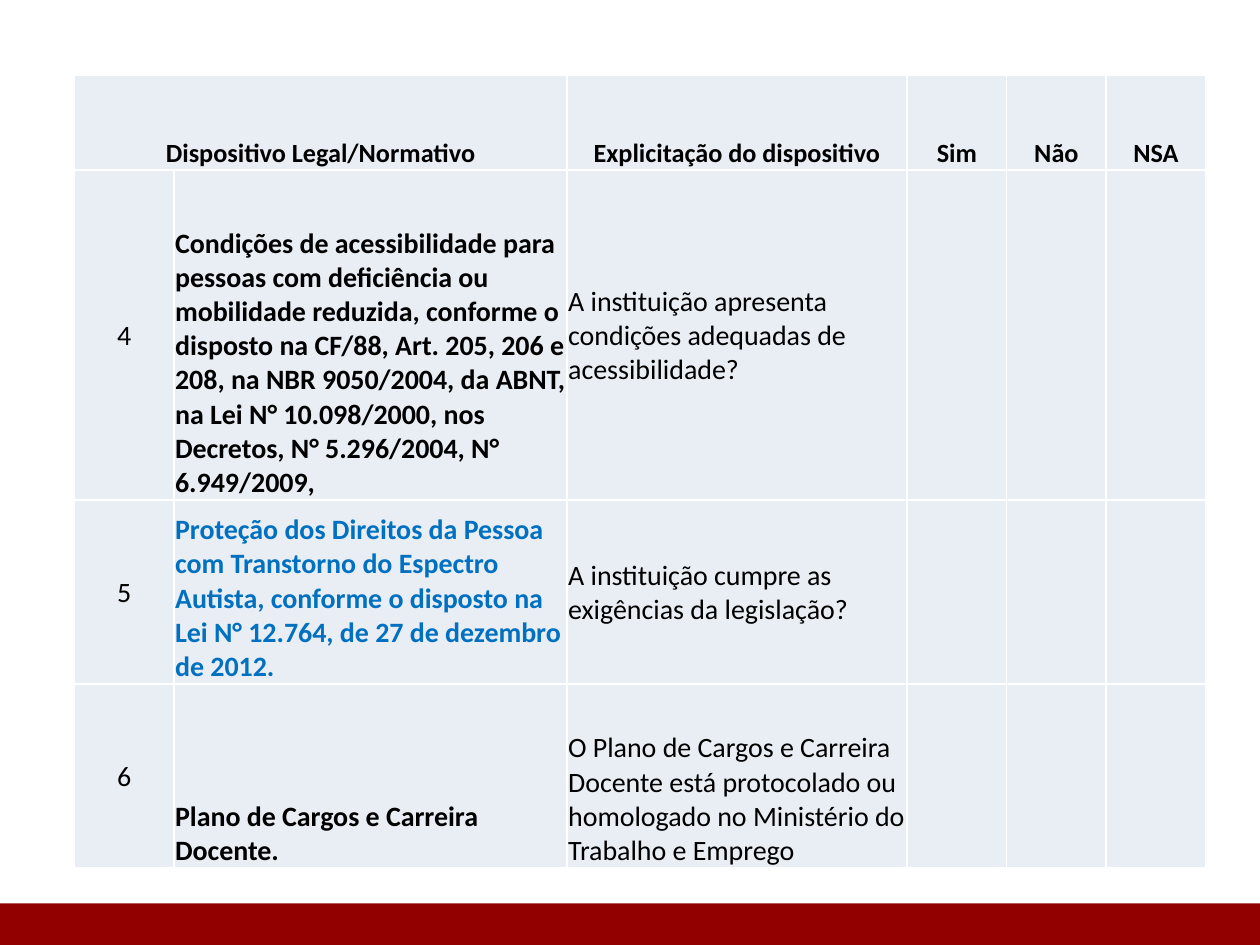
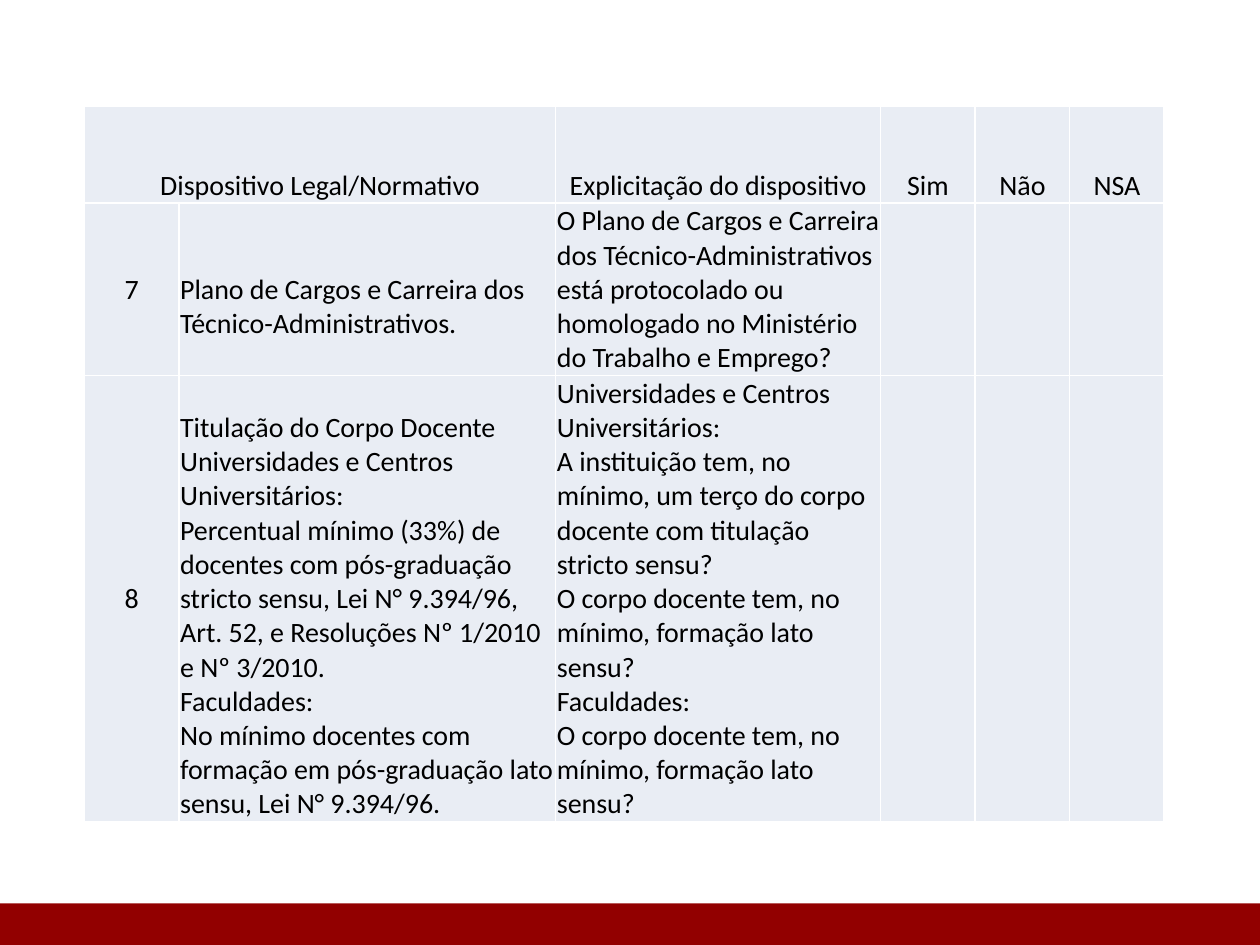
import dataclasses

import lxml.etree
import pptx
import pptx.dml.color
import pptx.enum.shapes
import pptx.enum.text
import pptx.oxml.ns
import pptx.util

Inches = pptx.util.Inches
Pt = pptx.util.Pt
RGB = pptx.dml.color.RGBColor.from_string
ANCHOR = pptx.enum.text.MSO_ANCHOR
ALIGN = pptx.enum.text.PP_ALIGN


@dataclasses.dataclass(frozen=True)
class Theme:
    font: str = "Calibri"
    text: str = "000000"
    highlight: str = "0070C0"
    cell: str = "E9EDF4"
    border: str = "FFFFFF"
    band: str = "920000"
    header_size: int = 15
    body_size: int = 16
    border_width: int = 1


@dataclasses.dataclass(frozen=True)
class Requirement:
    number: int
    rule: str
    question: str
    rule_color: str = Theme.text
    rule_bottom: float = 0
    question_anchor: ANCHOR = ANCHOR.MIDDLE


THEME = Theme()
HEADINGS = ["Dispositivo Legal/Normativo", "Explicitação do dispositivo", "Sim", "Não", "NSA"]

ACCESS_AND_CAREER = [
    Requirement(
        4,
        "Condições de acessibilidade para pessoas com deficiência ou mobilidade reduzida, "
        "conforme o disposto na CF/88, Art. 205, 206 e 208, na NBR 9050/2004, da ABNT, "
        "na Lei N° 10.098/2000, nos Decretos, N° 5.296/2004, N° 6.949/2009,",
        "A instituição apresenta condições adequadas de acessibilidade?",
    ),
    Requirement(
        5,
        "Proteção dos Direitos da Pessoa com Transtorno do Espectro Autista, "
        "conforme o disposto na Lei N° 12.764, de 27 de dezembro de 2012.",
        "A instituição cumpre as exigências da legislação?",
        rule_color=THEME.highlight,
    ),
    Requirement(
        6,
        "Plano de Cargos e Carreira Docente.",
        "O Plano de Cargos e Carreira Docente está protocolado ou homologado "
        "no Ministério do Trabalho e Emprego",
        question_anchor=ANCHOR.BOTTOM,
    ),
]

STAFF_AND_DEGREES = [
    Requirement(
        7,
        "Plano de Cargos e Carreira dos Técnico-Administrativos.",
        "O Plano de Cargos e Carreira dos Técnico-Administrativos está protocolado "
        "ou homologado no Ministério do Trabalho e Emprego?",
        rule_bottom=0.27,
    ),
    Requirement(
        8,
        "Titulação do Corpo Docente\n"
        "Universidades e Centros Universitários:\n"
        "Percentual mínimo (33%) de docentes com pós-graduação stricto sensu, "
        "Lei N° 9.394/96, Art. 52, e Resoluções Nº 1/2010 e Nº 3/2010.\n"
        "Faculdades:\n"
        "No mínimo docentes com formação em pós-graduação lato sensu, Lei N° 9.394/96.",
        "Universidades e Centros Universitários:\n"
        "A instituição tem, no mínimo, um terço do corpo docente com titulação stricto sensu?\n"
        "O corpo docente tem, no mínimo, formação lato sensu?\n"
        "Faculdades:\n"
        "O corpo docente tem, no mínimo, formação lato sensu?",
    ),
]


def draw_borders(cell):
    properties = cell._tc.get_or_add_tcPr()
    qn = pptx.oxml.ns.qn
    for side in ("a:lnL", "a:lnR", "a:lnT", "a:lnB"):
        line = lxml.etree.SubElement(properties, qn(side), w=str(Pt(THEME.border_width)))
        fill = lxml.etree.SubElement(line, qn("a:solidFill"))
        lxml.etree.SubElement(fill, qn("a:srgbClr"), val=THEME.border)


def style_cell(cell):
    draw_borders(cell)
    cell.fill.solid()
    cell.fill.fore_color.rgb = RGB(THEME.cell)


def write_cell(cell, text, align=ALIGN.LEFT, anchor=ANCHOR.BOTTOM,
               size=THEME.body_size, bold=False, color=THEME.text, bottom=0):
    cell.margin_left = cell.margin_right = cell.margin_top = Inches(0.01)
    cell.margin_bottom = Inches(bottom)
    cell.vertical_anchor = anchor
    cell.text = text
    for paragraph in cell.text_frame.paragraphs:
        paragraph.alignment = align
        font = paragraph.font
        font.name, font.size, font.bold = THEME.font, Pt(size), bold
        font.color.rgb = RGB(color)


def add_checklist(slide, left, top, columns, rows, requirements,
                  header_size=THEME.body_size, bold=False):
    """Add a requirements table; bold applies to the headings and rules."""
    checklist = slide.shapes.add_table(
        len(rows), len(columns), Inches(left), Inches(top),
        Inches(sum(columns)), Inches(sum(rows)),
    ).table
    checklist.first_row = checklist.horz_banding = False
    for column, width in zip(checklist.columns, columns):
        column.width = Inches(width)
    for row, height in zip(checklist.rows, rows):
        row.height = Inches(height)
    for cell in checklist.iter_cells():
        style_cell(cell)

    checklist.cell(0, 0).merge(checklist.cell(0, 1))
    for column, heading in zip((0, 2, 3, 4, 5), HEADINGS):
        write_cell(checklist.cell(0, column), heading, ALIGN.CENTER,
                   size=header_size, bold=bold)
    for row, item in enumerate(requirements, start=1):
        write_cell(checklist.cell(row, 0), str(item.number), ALIGN.CENTER, ANCHOR.MIDDLE)
        write_cell(checklist.cell(row, 1), item.rule, bold=bold,
                   color=item.rule_color, bottom=item.rule_bottom)
        write_cell(checklist.cell(row, 2), item.question, anchor=item.question_anchor)


def add_footer_band(slide):
    band = slide.shapes.add_shape(
        pptx.enum.shapes.MSO_SHAPE.RECTANGLE,
        Inches(0), Inches(7.17), Inches(10), Inches(0.33),
    )
    band.shadow.inherit = False
    band.fill.solid()
    band.fill.fore_color.rgb = RGB(THEME.band)
    band.line.fill.background()


def main():
    deck = pptx.Presentation()
    deck.slide_width, deck.slide_height = Inches(10), Inches(7.5)
    blank = deck.slide_layouts[6]

    access = deck.slides.add_slide(blank)
    add_checklist(access, 0.59, 0.6, [0.79, 3.12, 2.7] + [0.79] * 3,
                  [0.75, 2.62, 1.46, 1.46], ACCESS_AND_CAREER,
                  header_size=THEME.header_size, bold=True)
    add_footer_band(access)

    staff = deck.slides.add_slide(blank)
    add_checklist(staff, 0.67, 0.84, [0.75, 2.99, 2.58] + [0.75] * 3,
                  [0.77, 1.34, 3.33], STAFF_AND_DEGREES)
    add_footer_band(staff)

    deck.save("out.pptx")


if __name__ == "__main__":
    main()
